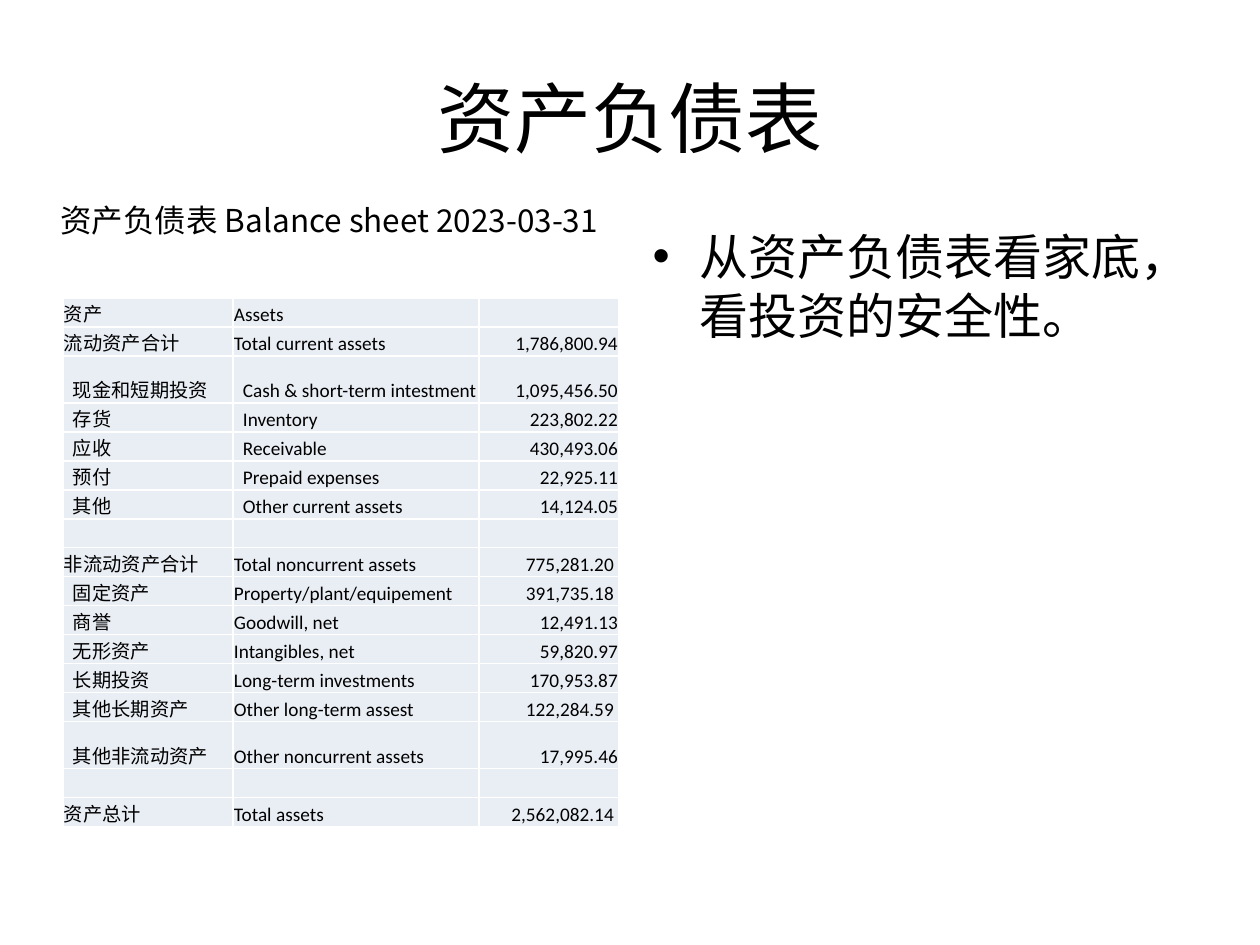
"""Build the balance sheet slide: a table of assets beside one remark."""
import lxml.etree
import pptx
import pptx.dml.color
import pptx.enum.text
import pptx.oxml.ns
import pptx.util

PX_PER_INCH = 126
SLIDE = (1260, 945)
BLACK, ROW_FILL = "000000", "E9EDF4"
INDENT, PAD = 9, 1

TITLE = {"text": "资产负债表", "box": (63, 38, 1134, 157), "size": 44, "name": "Calibri"}
REMARK = {"text": "从资产负债表看家底，看投资的安全性。", "box": (640, 220, 557, 624),
          "size": 28, "name": "Calibri"}
CAPTION = {"text": "资产负债表 Balance sheet 2023-03-31", "box": (48, 195, 572, 50),
           "size": 18, "name": "Noto Sans CJK SC"}

TABLE_ORIGIN = (63, 298)
COLUMNS = (170, 246, 140)
ROW, TALL_ROW, BLANK_ROW = 25, 47, 29
TALL = ("现金和短期投资", "其他非流动资产")
BLANK = ("", "", "")
ROWS = [
    ("资产", "Assets", ""),
    ("流动资产合计", "Total current assets", "1,786,800.94"),
    ("现金和短期投资", "Cash & short-term intestment", "1,095,456.50"),
    ("存货", "Inventory", "223,802.22"),
    ("应收", "Receivable", "430,493.06"),
    ("预付", "Prepaid expenses", "22,925.11"),
    ("其他", "Other current assets", "14,124.05"),
    BLANK,
    ("非流动资产合计", "Total noncurrent assets", "775,281.20"),
    ("固定资产", "Property/plant/equipement", "391,735.18"),
    ("商誉", "Goodwill, net", "12,491.13"),
    ("无形资产", "Intangibles, net", "59,820.97"),
    ("长期投资", "Long-term investments", "170,953.87"),
    ("其他长期资产", "Other long-term assest", "122,284.59"),
    ("其他非流动资产", "Other noncurrent assets", "17,995.46"),
    BLANK,
    ("资产总计", "Total assets", "2,562,082.14"),
]
CURRENT_ITEMS, NONCURRENT_ITEMS = range(2, 7), range(9, 15)
INSET_AMOUNTS = ("775,281.20", "391,735.18", "122,284.59", "2,562,082.14")


def px(n):
    return pptx.util.Emu(round(n * 914400 / PX_PER_INCH))


def rgb(value):
    return pptx.dml.color.RGBColor.from_string(value)


def write(p, text, size, name):
    r = p.add_run()
    r.text = text
    for key, value in {"size": pptx.util.Pt(size), "name": name}.items():
        setattr(r.font, key, value)
    r.font.color.rgb = rgb(BLACK)


def fill_box(sp, content):
    for key, value in zip(("left", "top", "width", "height"), content["box"]):
        setattr(sp, key, px(value))
    p = sp.text_frame.paragraphs[0]
    write(p, content["text"], content["size"], content["name"])


def fill_cell(cell, text, left, right, align):
    formats = {"margin_left": px(PAD + left), "margin_right": px(PAD + right),
               "margin_top": px(PAD), "margin_bottom": 0,
               "vertical_anchor": pptx.enum.text.MSO_ANCHOR.BOTTOM}
    for key, value in formats.items():
        setattr(cell, key, value)
    cell.fill.solid()
    cell.fill.fore_color.rgb = rgb(ROW_FILL)
    p = cell.text_frame.paragraphs[0]
    p.alignment = align
    if text:
        write(p, text, 11, "Calibri")
    else:
        lxml.etree.SubElement(p._p, pptx.oxml.ns.qn("a:endParaRPr"), sz="1100")


def row_height(row):
    if row == BLANK:
        return BLANK_ROW
    return TALL_ROW if row[0] in TALL else ROW


def add_assets(slide):
    heights = [row_height(row) for row in ROWS]
    size = (sum(COLUMNS), sum(heights))
    table = slide.shapes.add_table(len(ROWS), len(COLUMNS),
                                   *map(px, TABLE_ORIGIN + size)).table
    table.first_row = table.horz_banding = False
    for column, width in zip(table.columns, COLUMNS):
        column.width = px(width)
    align = pptx.enum.text.PP_ALIGN
    for i, (row, height) in enumerate(zip(ROWS, heights)):
        table.rows[i].height = px(height)
        chinese, english, amount = row
        item = i in CURRENT_ITEMS or i in NONCURRENT_ITEMS
        fill_cell(table.cell(i, 0), chinese, INDENT * item, 0, align.LEFT)
        fill_cell(table.cell(i, 1), english, INDENT * (i in CURRENT_ITEMS), 0, align.LEFT)
        fill_cell(table.cell(i, 2), amount, 0, 4 * (amount in INSET_AMOUNTS), align.RIGHT)


def main():
    prs = pptx.Presentation()
    prs.slide_width, prs.slide_height = map(px, SLIDE)
    slide = prs.slides.add_slide(prs.slide_layouts[1])
    fill_box(slide.shapes.title, TITLE)
    add_assets(slide)
    fill_box(slide.placeholders[1], REMARK)
    caption = slide.shapes.add_textbox(*map(px, CAPTION["box"]))
    caption.text_frame.word_wrap = False
    fill_box(caption, CAPTION)
    prs.save("out.pptx")


if __name__ == "__main__":
    main()
